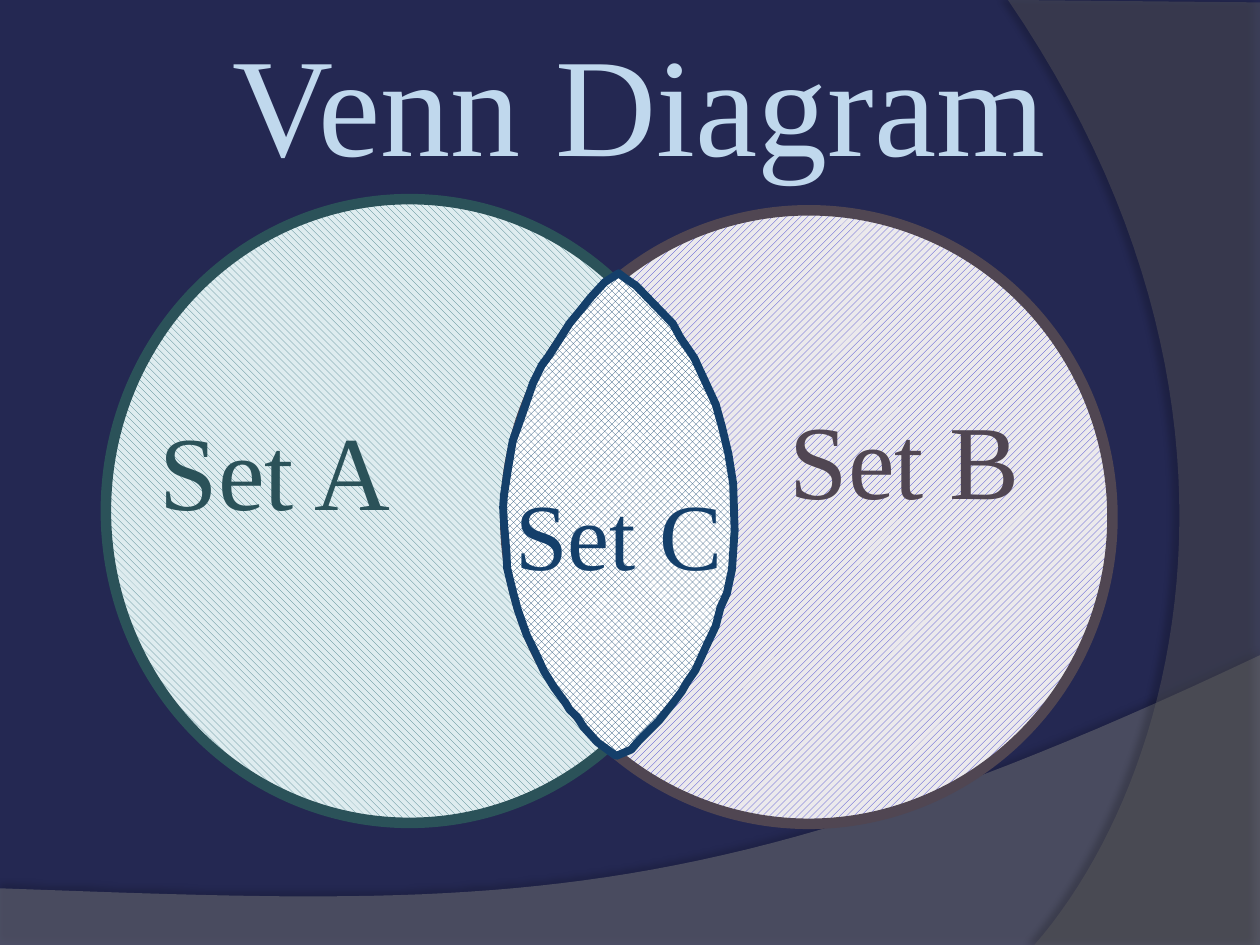
from dataclasses import dataclass

from lxml.etree import SubElement
from pptx import Presentation
from pptx.dml.color import RGBColor
from pptx.enum.dml import MSO_PATTERN as Pattern
from pptx.enum.shapes import MSO_SHAPE as Shape
from pptx.enum.text import MSO_AUTO_SIZE as AutoSize
from pptx.oxml.ns import qn
from pptx.util import Pt


@dataclass(frozen=True)
class Theme:
    background: str = "242852"
    title: str = "C0D8ED"
    green: str = "2B5259"
    brown: str = "504652"
    blue: str = "143F6A"
    shadow: str = "000000"
    font: str = "Times New Roman"
    title_size: int = 80
    set_size: int = 60
    overlap_size: int = 54
    circle_line: float = 6
    overlap_line: float = 4.5


THEME = Theme()
WIDTH, HEIGHT = 720, 540
CURVE_STEPS = 48

WAVES = [
    dict(corners=[(0, 507.6), (0, 540.7), (WIDTH, 540.7), (WIDTH, 374.4)],
         curve=[(402.5, 524.9), (281.5, 517.7), (0, 507.6)],
         color="7F7F7F", opacity=45, shadow=dict(opacity=35, blur=4, distance=3.5, angle=270)),
    dict(corners=[(WIDTH, 1.4), (WIDTH, HEIGHT), (591.1, HEIGHT)],
         curve=[(673.2, 445.7), (733, 229.7), (576, 0)],
         color="5E5E5E", opacity=40, shadow=dict(opacity=45, blur=4, distance=4, angle=180)),
]

CIRCLES = [
    ((60.5, 113.8, 347, 356.4), "wdDnDiag", "417B85", "DEECEF", THEME.green),
    ((288.7, 120.2, 347, 350.6), "wdUpDiag", "3333CC", "EBE9EC", THEME.brown),
]

OVERLAP = [
    (353.5, 156.2), (345.6, 161.3), (337.7, 169.9), (331.9, 177.1), (325.4, 185), (319, 195.1),
    (313.9, 203), (309.6, 208.8), (304.6, 218.9), (297.4, 239.8), (293, 252), (290.2, 268.6),
    (288, 283), (287.5, 290), (288, 298.8), (289.4, 315.4), (289.8, 324.7), (293, 337.7),
    (295.9, 348.5), (301, 362.9), (306, 373), (311, 383.8), (316.8, 393.1), (323.3, 401.8),
    (325.4, 405.4), (329.8, 409.7), (333.4, 415.4), (341.3, 424.1), (352.1, 432), (360.7, 428.4),
    (365, 423.4), (370.1, 418.3), (376.6, 411.8), (385.2, 401), (389.5, 395.3), (392.4, 390.2),
    (397.4, 383), (403.2, 370.1), (409, 357.8), (411.8, 347), (415.4, 339.1), (418.3, 325.4),
    (419.8, 303.1), (419, 276.5), (416.2, 259.2), (412.6, 244.1), (409, 231.1), (396.7, 204.5),
    (388.8, 193), (384.5, 185), (363.6, 163.4), (356.4, 158.4),
]

TITLE = ("Venn Diagram", (126, 5.8, 498.2, 103), THEME.title_size, THEME.title)
SET_LABELS = [
    ("Set A", (84.2, 228.2, 167.8, 79.2), THEME.set_size, THEME.green),
    ("Set B", (444.2, 221.8, 156.2, 79.2), THEME.set_size, THEME.brown),
]
OVERLAP_LABEL = ("Set C", (287.3, 268.6, 144.7, 72.7), THEME.overlap_size, THEME.blue)


def rgb(color):
    return RGBColor.from_string(color)


def sample_curve(start, first, second, end):
    """Return evenly spaced points along a cubic curve."""
    points = []
    for step in range(1, CURVE_STEPS + 1):
        t = step / CURVE_STEPS
        weights = ((1 - t) ** 3, 3 * t * (1 - t) ** 2, 3 * t ** 2 * (1 - t), t ** 3)
        controls = (start, first, second, end)
        points.append(tuple(sum(w * c[axis] for w, c in zip(weights, controls)) for axis in (0, 1)))
    return points


def add_outline(slide, points):
    start, *rest = [(Pt(x), Pt(y)) for x, y in points]
    builder = slide.shapes.build_freeform(*start, scale=1.0)
    builder.add_line_segments(rest, close=True)
    shape = builder.convert_to_shape()
    shape.shadow.inherit = False
    return shape


def add_wave(slide, corners, curve, color, opacity, shadow):
    shape = add_outline(slide, corners + sample_curve(corners[-1], *curve))
    shape.fill.solid()
    shape.fill.fore_color.rgb = rgb(color)
    shape.line.fill.background()
    properties = shape._element.spPr
    fill_color = properties.find(qn("a:solidFill")).find(qn("a:srgbClr"))
    SubElement(fill_color, qn("a:alpha"), val=str(opacity * 1000))
    outer = SubElement(properties.find(qn("a:effectLst")), qn("a:outerShdw"),
                       blurRad=str(Pt(shadow["blur"])), dist=str(Pt(shadow["distance"])),
                       dir=str(shadow["angle"] * 60000), rotWithShape="0")
    shadow_color = SubElement(outer, qn("a:srgbClr"), val=THEME.shadow)
    SubElement(shadow_color, qn("a:alpha"), val=str(shadow["opacity"] * 1000))


def style_region(shape, pattern, foreground, background, line_color, line_width):
    shape.shadow.inherit = False
    shape.fill.patterned()
    shape.fill.pattern = Pattern.from_xml(pattern)
    shape.fill.fore_color.rgb = rgb(foreground)
    shape.fill.back_color.rgb = rgb(background)
    shape.line.color.rgb = rgb(line_color)
    shape.line.width = Pt(line_width)


def add_label(slide, text, box, size, color):
    text_frame = slide.shapes.add_textbox(*map(Pt, box)).text_frame
    text_frame.word_wrap = True
    text_frame.auto_size = AutoSize.SHAPE_TO_FIT_TEXT
    text_frame.text = text
    paragraph = text_frame.paragraphs[0]
    space_before = SubElement(paragraph._p.get_or_add_pPr(), qn("a:spcBef"))
    SubElement(space_before, qn("a:spcPct"), val="50000")
    font = paragraph.runs[0].font
    font.name, font.size = THEME.font, Pt(size)
    font.color.rgb = rgb(color)


def main():
    presentation = Presentation()
    presentation.slide_width, presentation.slide_height = Pt(WIDTH), Pt(HEIGHT)
    slide = presentation.slides.add_slide(presentation.slide_layouts[6])
    slide.background.fill.solid()
    slide.background.fill.fore_color.rgb = rgb(THEME.background)

    for wave in WAVES:
        add_wave(slide, **wave)
    add_label(slide, *TITLE)
    for box, *style in CIRCLES:
        circle = slide.shapes.add_shape(Shape.OVAL, *map(Pt, box))
        style_region(circle, *style, THEME.circle_line)
    for label in SET_LABELS:
        add_label(slide, *label)
    overlap = add_outline(slide, OVERLAP)
    style_region(overlap, "openDmnd", "234F77", "FFFFFF", THEME.blue, THEME.overlap_line)
    add_label(slide, *OVERLAP_LABEL)

    presentation.save("out.pptx")


if __name__ == "__main__":
    main()
